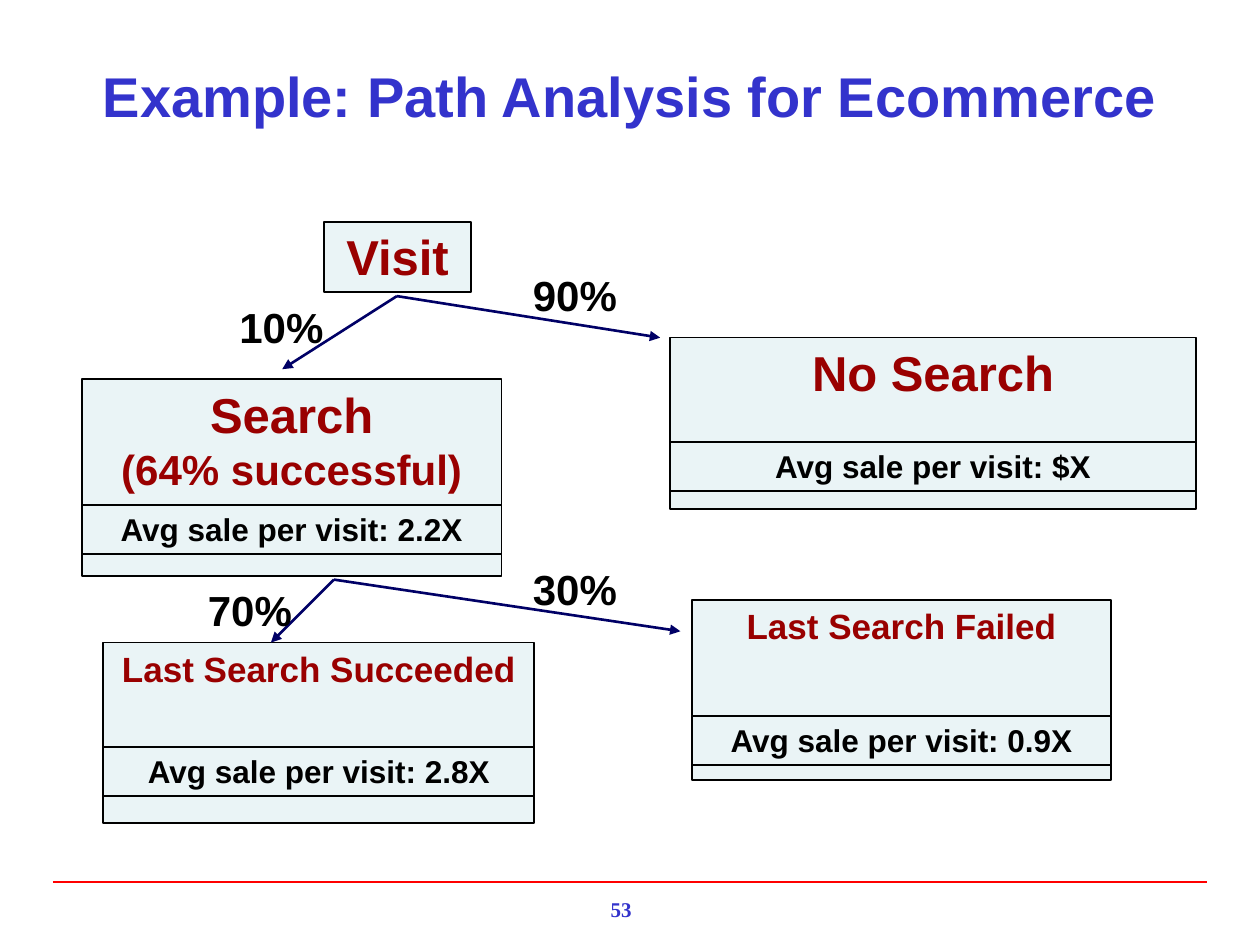
from lxml import etree
from pptx import Presentation
from pptx.dml.color import RGBColor
from pptx.enum.shapes import MSO_CONNECTOR, MSO_SHAPE
from pptx.enum.text import MSO_ANCHOR, PP_ALIGN
from pptx.oxml.ns import qn
from pptx.util import Inches, Pt

RECTANGLE = MSO_SHAPE.RECTANGLE
STRAIGHT = MSO_CONNECTOR.STRAIGHT
TOP, MIDDLE = MSO_ANCHOR.TOP, MSO_ANCHOR.MIDDLE
LEFT, CENTER = PP_ALIGN.LEFT, PP_ALIGN.CENTER

BLACK = RGBColor(0x00, 0x00, 0x00)
BLUE = RGBColor(0x33, 0x33, 0xCC)
NAVY = RGBColor(0x00, 0x00, 0x66)
MAROON = RGBColor(0x99, 0x00, 0x00)
RED = RGBColor(0xFF, 0x00, 0x00)
PALE = RGBColor(0xEA, 0xF4, 0xF6)


def write_text(shape, lines, size=24, color=BLACK, font="Arial",
               align=CENTER, anchor=TOP, last_size=None):
    frame = shape.text_frame
    frame.word_wrap = True
    frame.vertical_anchor = anchor
    frame.margin_left = frame.margin_right = Inches(0.08)
    frame.margin_top = frame.margin_bottom = Inches(0.04)
    para = frame.paragraphs[0]
    para.alignment = align
    for index, line in enumerate(lines.split("\n")):
        if index:
            para.add_line_break()
        span = para.add_run()
        span.text = line
        span.font.name = font
        span.font.size = Pt(last_size if index and last_size else size)
        span.font.bold = True
        span.font.color.rgb = color


class PathSlide:
    def __init__(self, deck):
        self.page = deck.slides.add_slide(deck.slide_layouts[6])
        self.fill = PALE
        self.outline = BLACK

    def label(self, text, left, top, width=1.67, height=0.48, **style):
        box = self.page.shapes.add_textbox(
            Inches(left), Inches(top), Inches(width), Inches(height))
        write_text(box, text, **style)

    def box(self, text, left, top, width, height, **style):
        shape = self.page.shapes.add_shape(
            RECTANGLE, Inches(left), Inches(top), Inches(width), Inches(height))
        shape.shadow.inherit = False
        shape.fill.solid()
        shape.fill.fore_color.rgb = self.fill
        shape.line.color.rgb = self.outline
        shape.line.width = Pt(1)
        write_text(shape, text, **style)

    def stage(self, text, sale, left, top, width, height, sale_top, **style):
        self.box(text, left, top, width, height, color=MAROON, **style)
        self.box(f"Avg sale per visit: {sale}", left, sale_top, width, 0.39, size=18)

    def line(self, start, end, color=NAVY, width=1.5, arrow=True):
        connector = self.page.shapes.add_connector(
            STRAIGHT, *(Inches(value) for value in (*start, *end)))
        connector.line.color.rgb = color
        connector.line.width = Pt(width)
        if arrow:
            outline = connector.line._get_or_add_ln()
            etree.SubElement(outline, qn("a:tailEnd"), type="triangle")
        etree.SubElement(connector._element.spPr, qn("a:effectLst"))


def main():
    deck = Presentation()
    deck.slide_width, deck.slide_height = Inches(10), Inches(7.5)
    slide = PathSlide(deck)

    slide.line((0.42, 7), (9.58, 7), color=RED, width=1, arrow=False)
    slide.label("53", 3.89, 7.05, 2.08, 0.33, size=12, color=BLUE,
                font="Times New Roman", anchor=MIDDLE)
    slide.label("Example: Path Analysis for Ecommerce", 0.5, 0.42, 9, 0.67,
                size=32, color=BLUE, anchor=MIDDLE)

    slide.box("Visit", 2.57, 1.76, 1.17, 0.56, size=28, color=MAROON)
    slide.stage("Search\n(64% successful)", "2.2X", 0.65, 3.01, 3.33, 1.56, 4.01,
                size=28, last_size=24)
    slide.stage("No Search", "$X", 5.32, 2.68, 4.17, 1.36, 3.51, size=28)
    slide.stage("Last Search Succeeded", "2.8X", 0.82, 5.1, 3.42, 1.43, 5.93, size=20)
    slide.stage("Last Search Failed", "0.9X", 5.49, 4.76, 3.33, 1.43, 5.68, size=20)

    visit_exit, search_exit = (3.15, 2.35), (2.65, 4.6)
    branches = [
        ("10%", (1.82, 2.35), visit_exit, (2.24, 2.93)),
        ("90%", (4.15, 2.1), visit_exit, (5.24, 2.68)),
        ("70%", (1.57, 4.6), search_exit, (2.15, 5.1)),
        ("30%", (4.15, 4.43), search_exit, (5.4, 5.01)),
    ]
    for share, place, start, end in branches:
        slide.line(start, end)
        slide.label(share, *place, align=LEFT)

    deck.save("out.pptx")


if __name__ == "__main__":
    main()
